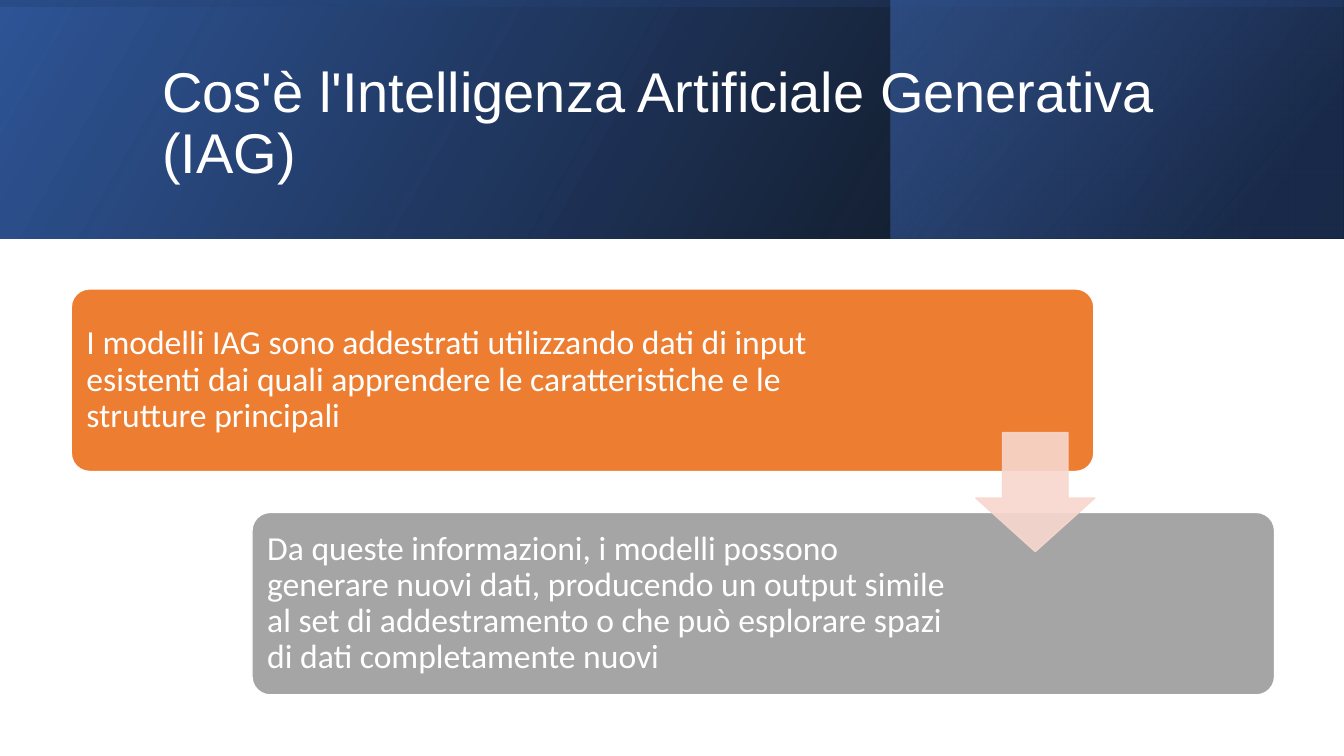
from lxml.etree import SubElement
from pptx import Presentation
from pptx.dml.color import RGBColor
from pptx.enum.shapes import MSO_SHAPE
from pptx.enum.text import MSO_ANCHOR, MSO_AUTO_SIZE, PP_ALIGN
from pptx.oxml.ns import qn
from pptx.util import Pt


def color(hex_string):
    return RGBColor.from_string(hex_string)


def set_alpha(color_element, percent):
    """Make a colour element partly transparent; 100 percent is opaque."""
    SubElement(color_element, qn("a:alpha")).set("val", str(percent * 1000))


deck = Presentation()
deck.slide_width, deck.slide_height = Pt(960), Pt(540)
page = deck.slides.add_slide(deck.slide_layouts[5])

# Header: three overlapping gradient bands
# left, top, width, height, rotation, gradient angle, stops (position, colour, opacity)
HEADER = 170.6
bands = [
    (0, 0, 960, HEADER, 0, 330, [(0, "000000", 96), (100, "2F5597", 100)]),
    (636.5, 0, 323, HEADER, 0, 320, [(19, "203864", 68), (100, "4472C4", 48)]),
    ((960 - HEADER) / 2, (HEADER - 960) / 2, HEADER, 960, 270, 350,
     [(23, "2F5597", 16), (99, "000000", 45)]),
]
for left, top, width, height, rotation, angle, stops in bands:
    band = page.shapes.add_shape(
        MSO_SHAPE.RECTANGLE, Pt(left), Pt(top), Pt(width), Pt(height))
    band.shadow.inherit = False
    band.rotation = rotation
    band._element.spPr.find(qn("a:xfrm")).set("flipH", "1")
    band.line.fill.background()
    band.fill.gradient()
    gradient = band._element.spPr.find(qn("a:gradFill"))
    gradient.find(qn("a:lin")).set("ang", str(angle * 60000))
    for stop, (position, hex_string, opacity) in zip(band.fill.gradient_stops, stops):
        stop.position = position / 100
        stop.color.rgb = color(hex_string)
    for element, (_, _, opacity) in zip(gradient.iter(qn("a:srgbClr")), stops):
        set_alpha(element, opacity)

# Title, brought in front of the bands
title = page.shapes.title
title._element.getparent().append(title._element)
title.left, title.top, title.width, title.height = Pt(108.7), Pt(27.4), Pt(765.4), Pt(123.8)
title.text_frame.text = "Cos'è l'Intelligenza Artificiale Generativa (IAG)"
title.text_frame.auto_size = MSO_AUTO_SIZE.NONE
title.text_frame.vertical_anchor = MSO_ANCHOR.MIDDLE
heading = title.text_frame.paragraphs[0]
heading.alignment = PP_ALIGN.LEFT
heading.line_spacing = 0.9
heading.font.name, heading.font.size = "Arial", Pt(40)
heading.font.color.rgb = color("FFFFFF")

# Two staggered steps
CARD_WIDTH, CARD_HEIGHT, INSET = 730.4, 130.4, 3.8
steps = [
    (50.9, 206.4, 596, "ED7D31",
     "I modelli IAG sono addestrati utilizzando dati di input esistenti dai quali "
     "apprendere le caratteristiche e le strutture principali"),
    (180, 366, 510, "A5A5A5",
     "Da queste informazioni, i modelli possono generare nuovi dati, producendo un "
     "output simile al set di addestramento o che può esplorare spazi di dati "
     "completamente nuovi"),
]
for left, top, text_width, fill, text in steps:
    card = page.shapes.add_shape(
        MSO_SHAPE.ROUNDED_RECTANGLE, Pt(left), Pt(top), Pt(CARD_WIDTH), Pt(CARD_HEIGHT))
    card.adjustments[0] = 0.1
    card.shadow.inherit = False
    card.fill.solid()
    card.fill.fore_color.rgb = color(fill)
    card.line.color.rgb = color("FFFFFF")
    card.line.width = Pt(1)

    box = page.shapes.add_textbox(
        Pt(left + INSET), Pt(top + INSET), Pt(text_width), Pt(CARD_HEIGHT - 2 * INSET))
    frame = box.text_frame
    frame.word_wrap = True
    frame.vertical_anchor = MSO_ANCHOR.MIDDLE
    frame.margin_left = frame.margin_right = Pt(7.2)
    frame.margin_top = frame.margin_bottom = Pt(7.2)
    frame.text = text
    para = frame.paragraphs[0]
    para.line_spacing = 0.9
    para.font.name, para.font.size = "Calibri", Pt(24)
    para.font.color.rgb = color("FFFFFF")

# Arrow from the first step to the second
arrow = page.shapes.add_shape(MSO_SHAPE.DOWN_ARROW, Pt(697), Pt(309), Pt(85), Pt(85))
arrow.adjustments[0], arrow.adjustments[1] = 0.55, 0.45
arrow.shadow.inherit = False
arrow.fill.solid()
arrow.fill.fore_color.rgb = color("F8D7CE")
arrow.line.color.rgb = color("F8D7CE")
arrow.line.width = Pt(1)
for element in arrow._element.spPr.iter(qn("a:srgbClr")):
    set_alpha(element, 90)

deck.save("out.pptx")
